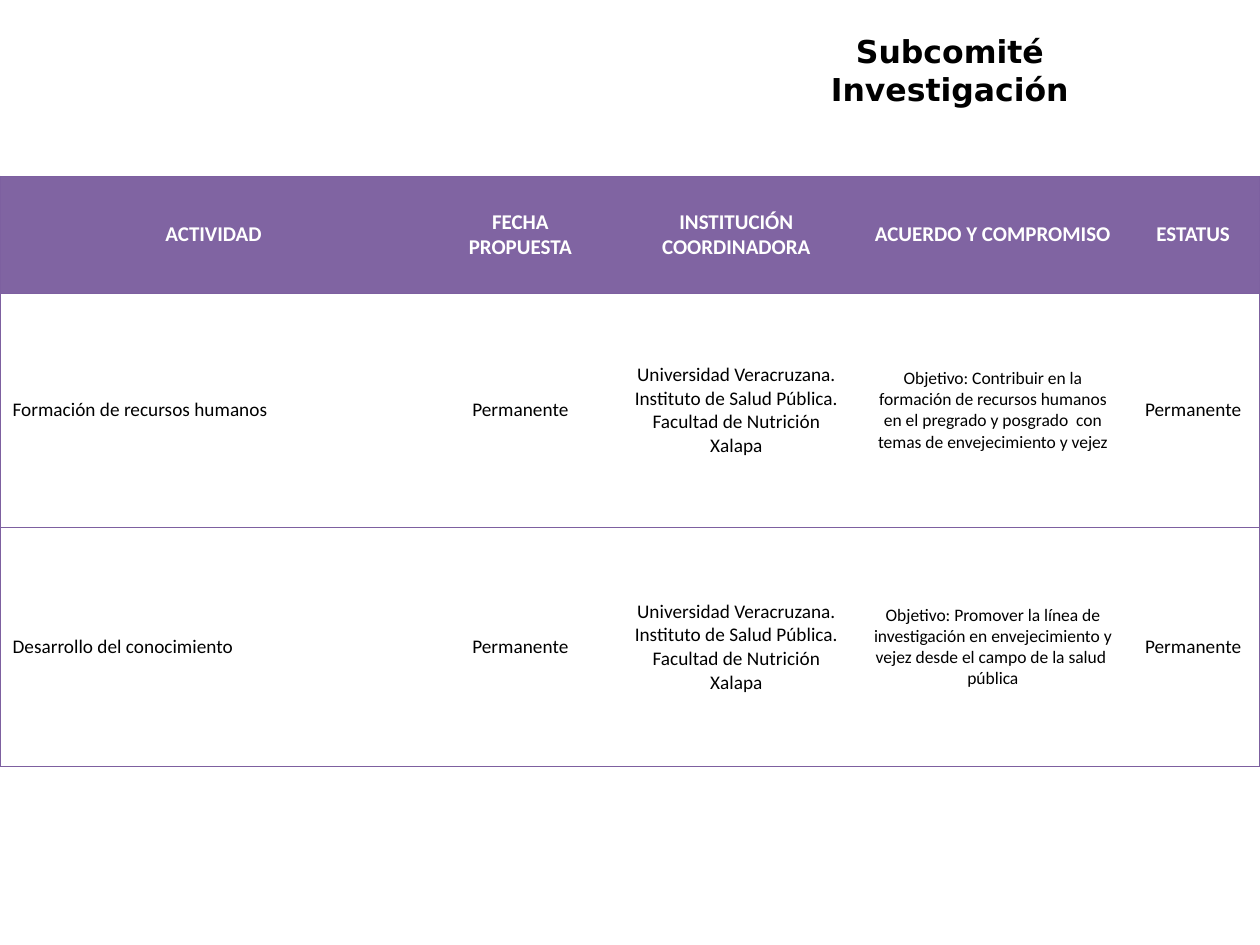
from lxml import etree
from pptx import Presentation
from pptx.dml.color import RGBColor
from pptx.enum.text import MSO_ANCHOR, MSO_AUTO_SIZE, PP_ALIGN
from pptx.oxml.ns import qn
from pptx.util import Pt

MIDDLE = MSO_ANCHOR.MIDDLE
NO_AUTOFIT = MSO_AUTO_SIZE.NONE
CENTER, JUSTIFY = PP_ALIGN.CENTER, PP_ALIGN.JUSTIFY
TITLE_ONLY = 5
PLAIN_TABLE_STYLE = "{2D5ABB26-0587-4C30-8999-92F81FD0307C}"

HEADERS = ["ACTIVIDAD", "FECHA PROPUESTA", "INSTITUCIÓN COORDINADORA",
           "ACUERDO Y COMPROMISO", "ESTATUS"]
INSTITUTION = ("Universidad Veracruzana. Instituto de Salud Pública. "
               "Facultad de Nutrición Xalapa")
ACTIVITIES = [
    ("Formación de recursos humanos ",
     "Objetivo: Contribuir en la formación de recursos humanos en el pregrado "
     "y posgrado  con temas de envejecimiento y vejez"),
    ("Desarrollo del conocimiento ",
     "Objetivo: Promover la línea de investigación en envejecimiento y vejez "
     "desde el campo de la salud  pública"),
]
COLUMN_WIDTHS = [244.1, 106.5, 140.4, 152.7, 76.3]
ROW_HEIGHTS = [66.8, 133.8, 136.8]
BODY_SIZES = [11, 11, 11, 10, 11]


def color(value):
    return RGBColor.from_string(value)


class SlideWriter:
    title_font = {"name": "DejaVu Sans", "size": Pt(18), "bold": True}
    table_font = "Calibri"
    black, white = "000000", "FFFFFF"
    header_fill, border = "8064A2", "7D60A0"
    border_width = 0.75

    def __init__(self, slide):
        self.slide = slide

    def format(self, para, align, font, text_color):
        para.alignment = align
        for name, value in font.items():
            setattr(para.font, name, value)
        para.font.color.rgb = color(text_color)

    def title(self, lines, left, top, width, height):
        box = self.slide.shapes.title
        place = {"left": left, "top": top, "width": width, "height": height}
        for name, value in place.items():
            setattr(box, name, Pt(value))
        frame = box.text_frame
        frame.text = "\n".join(lines)
        frame.word_wrap = False
        frame.auto_size = NO_AUTOFIT
        frame.vertical_anchor = MIDDLE
        for para in frame.paragraphs:
            self.format(para, CENTER, self.title_font, self.black)

    def table(self, rows, left, top, widths, heights):
        frame = self.slide.shapes.add_table(
            len(rows), len(widths), Pt(left), Pt(top),
            Pt(sum(widths)), Pt(sum(heights)))
        table = frame.table
        table.horz_banding = False
        style = frame.element.find(".//" + qn("a:tableStyleId"))
        style.text = PLAIN_TABLE_STYLE
        for column, width in zip(table.columns, widths):
            column.width = Pt(width)
        for row, height in zip(table.rows, heights):
            row.height = Pt(height)
        for r, texts in enumerate(rows):
            for c, text in enumerate(texts):
                self.cell(table.cell(r, c), text, r, c, len(widths))

    def cell(self, cell, text, row, column, column_count):
        header = row == 0
        sides = {"L": column == 0, "R": column == column_count - 1,
                 "T": True, "B": True}
        self.borders(cell, [side for side, drawn in sides.items() if drawn])
        if header:
            cell.fill.solid()
            cell.fill.fore_color.rgb = color(self.header_fill)
        else:
            cell.fill.background()
        cell.vertical_anchor = MIDDLE
        cell.text = text
        font = {"name": self.table_font, "bold": header,
                "size": Pt(12 if header else BODY_SIZES[column])}
        align = JUSTIFY if column == 0 and not header else CENTER
        self.format(cell.text_frame.paragraphs[0], align, font,
                    self.white if header else self.black)

    def borders(self, cell, sides):
        """Draw the given sides; call before the fill, which must follow them."""
        properties = cell._tc.get_or_add_tcPr()
        for side in sides:
            line = etree.SubElement(properties, qn("a:ln" + side),
                                    w=str(Pt(self.border_width)))
            fill = etree.SubElement(line, qn("a:solidFill"))
            etree.SubElement(fill, qn("a:srgbClr"), val=self.border)


def main():
    deck = Presentation()
    deck.slide_width, deck.slide_height = Pt(720), Pt(540)
    page = deck.slides.add_slide(deck.slide_layouts[TITLE_ONLY])
    writer = SlideWriter(page)
    rows = [HEADERS] + [
        [activity, "Permanente", INSTITUTION, goal, "Permanente"]
        for activity, goal in ACTIVITIES]
    writer.table(rows, 0, 100.8, COLUMN_WIDTHS, ROW_HEIGHTS)
    writer.title(["Subcomité", "Investigación"], 465.8, 14.4, 154, 51)
    deck.save("out.pptx")


if __name__ == "__main__":
    main()
